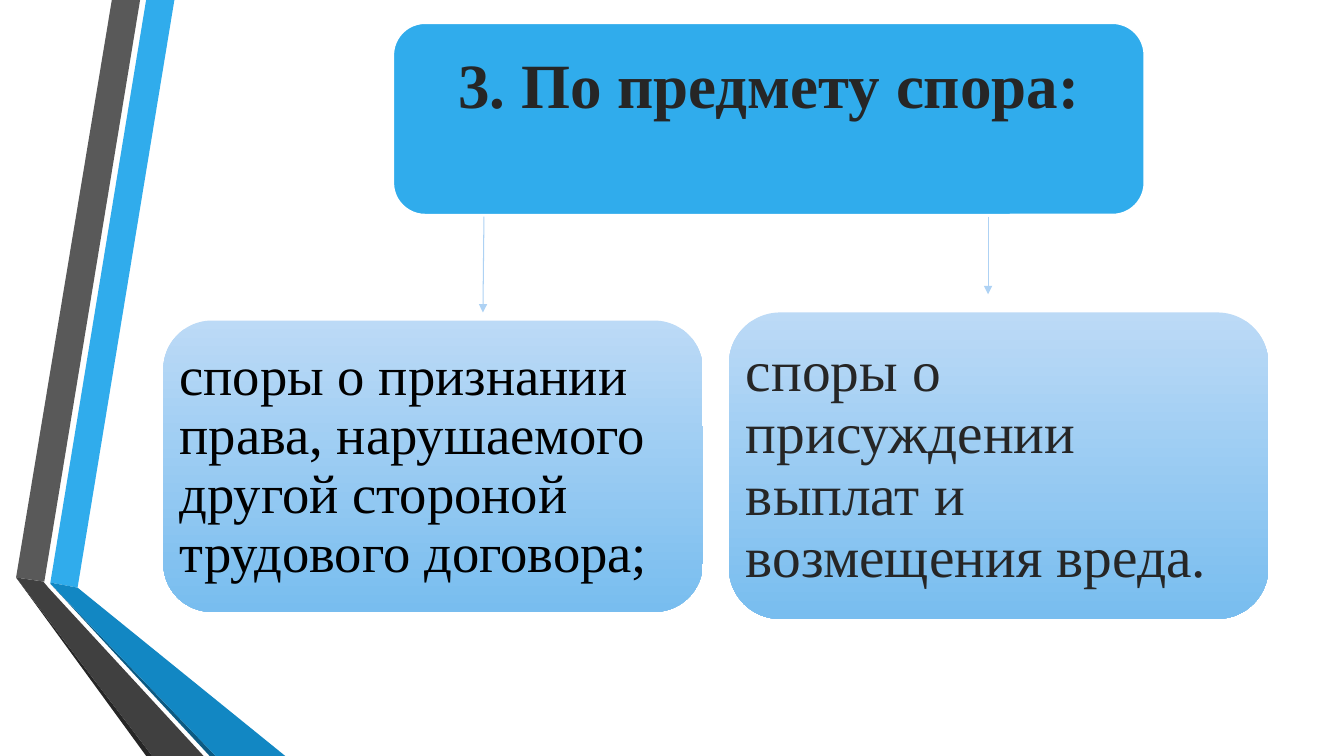
from typing import NamedTuple

from pptx import Presentation
from pptx.dml.color import RGBColor
from pptx.enum.shapes import MSO_CONNECTOR, MSO_SHAPE
from pptx.enum.text import MSO_ANCHOR as Anchor, PP_ALIGN as Align
from pptx.oxml.ns import qn
from pptx.oxml.xmlchemy import OxmlElement
from pptx.shapes.autoshape import Shape
from pptx.shapes.shapetree import SlideShapes
from pptx.util import Emu, Pt

PX = 9144  # EMU in one px, 100 px to the inch
FONT = "Times New Roman"

WHITE = RGBColor(0xFF, 0xFF, 0xFF)
BLACK = RGBColor(0x00, 0x00, 0x00)
INK = RGBColor(0x26, 0x26, 0x26)
CHARCOAL = RGBColor(0x40, 0x40, 0x40)
GREY = RGBColor(0x59, 0x59, 0x59)
BLUE = RGBColor(0x30, 0xAC, 0xEC)
MID_BLUE = RGBColor(0x12, 0x87, 0xC3)
DEEP_BLUE = RGBColor(0x0C, 0x5A, 0x82)
PALE_TOP = RGBColor(0xBC, 0xDA, 0xF6)
PALE_BOTTOM = RGBColor(0x78, 0xBD, 0xEF)
ARROW_BLUE = RGBColor(0xAE, 0xD2, 0xF4)

Point = tuple[int, int]


class Ribbon(NamedTuple):
    color: RGBColor
    outline: list[Point]


class Card(NamedTuple):
    text: str
    left: int
    top: int
    width: int
    height: int
    size: int
    color: RGBColor
    side_inset: int = 2
    top_inset: int = 2
    is_heading: bool = False


class Arrow(NamedTuple):
    start: Point
    end: Point


RIBBONS = [
    Ribbon(BLUE, [(50, 578), (77, 583), (173, 0), (145, 0)]),
    Ribbon(GREY, [(139, 0), (111, 0), (16, 573), (44, 577)]),
    Ribbon(INK, [(16, 573), (145, 750), (151, 750)]),
    Ribbon(DEEP_BLUE, [(50, 579), (208, 750), (214, 750)]),
    Ribbon(MID_BLUE, [(50, 579), (214, 750), (283, 750), (77, 583), (50, 578)]),
    Ribbon(CHARCOAL, [(202, 750), (48, 583), (43, 577), (16, 573), (151, 750)]),
]

CARDS = [
    Card("3. По предмету спора:", 390, 23, 745, 190, 45, INK,
         side_inset=10, top_inset=21, is_heading=True),
    Card("споры о признании права, нарушаемого другой стороной трудового договора;",
         162, 318, 535, 289, 39, BLACK),
    Card("споры о присуждении выплат и возмещения вреда.",
         723, 310, 535, 304, 41, INK),
]

ARROWS = [
    Arrow((480, 215), (479, 310)),
    Arrow((980, 215), (980, 292)),
]


def px(length: int) -> Emu:
    return Emu(length * PX)


def draw_ribbon(shapes: SlideShapes, ribbon: Ribbon) -> None:
    first, *others = ribbon.outline
    builder = shapes.build_freeform(*first, scale=PX)
    builder.add_line_segments(others, close=True)
    band = builder.convert_to_shape()
    band.shadow.inherit = False
    band.fill.solid()
    band.fill.fore_color.rgb = ribbon.color
    band.line.fill.background()


def paint_card(box: Shape, is_heading: bool) -> None:
    box.shadow.inherit = False
    if is_heading:
        box.fill.solid()
        box.fill.fore_color.rgb = BLUE
        box.line.color.rgb = WHITE
        box.line.width = Pt(1.25)
        return
    box.fill.gradient()
    box.fill.gradient_angle = 270  # counter-clockwise: runs top to bottom
    for stop, color in zip(box.fill.gradient_stops, (PALE_TOP, PALE_BOTTOM)):
        stop.color.rgb = color
    box.line.fill.background()


def draw_card(shapes: SlideShapes, card: Card) -> None:
    box = shapes.add_shape(MSO_SHAPE.ROUNDED_RECTANGLE, px(card.left), px(card.top),
                           px(card.width), px(card.height))
    paint_card(box, card.is_heading)

    frame = box.text_frame
    frame.text = card.text
    frame.word_wrap = True
    frame.vertical_anchor = Anchor.TOP if card.is_heading else Anchor.MIDDLE
    frame.margin_left = frame.margin_right = px(card.side_inset)
    frame.margin_top = px(card.top_inset)
    frame.margin_bottom = px(2)

    paragraph = frame.paragraphs[0]
    paragraph.alignment = Align.CENTER if card.is_heading else Align.LEFT
    paragraph.line_spacing = 0.9
    font = paragraph.runs[0].font
    font.name = FONT
    font.size = Pt(card.size)
    font.bold = card.is_heading
    font.color.rgb = card.color


def draw_arrow(shapes: SlideShapes, arrow: Arrow) -> None:
    ends = (px(value) for value in arrow.start + arrow.end)
    connector = shapes.add_connector(MSO_CONNECTOR.STRAIGHT, *ends)
    connector.line.color.rgb = ARROW_BLUE
    connector.line.width = Pt(0.75)

    # Arrowhead at the end, and no shadow
    properties = connector.element.spPr
    head = OxmlElement("a:tailEnd")
    head.set("type", "triangle")
    properties.find(qn("a:ln")).append(head)
    properties.append(OxmlElement("a:effectLst"))


def main() -> None:
    deck = Presentation()
    deck.slide_width, deck.slide_height = px(1333), px(750)
    shapes = deck.slides.add_slide(deck.slide_layouts[6]).shapes

    # Folded ribbons along the left edge
    for ribbon in RIBBONS:
        draw_ribbon(shapes, ribbon)

    # Heading and the two kinds of dispute
    for card in CARDS:
        draw_card(shapes, card)

    # Arrows from the heading to each kind
    for arrow in ARROWS:
        draw_arrow(shapes, arrow)

    deck.save("out.pptx")


if __name__ == "__main__":
    main()
